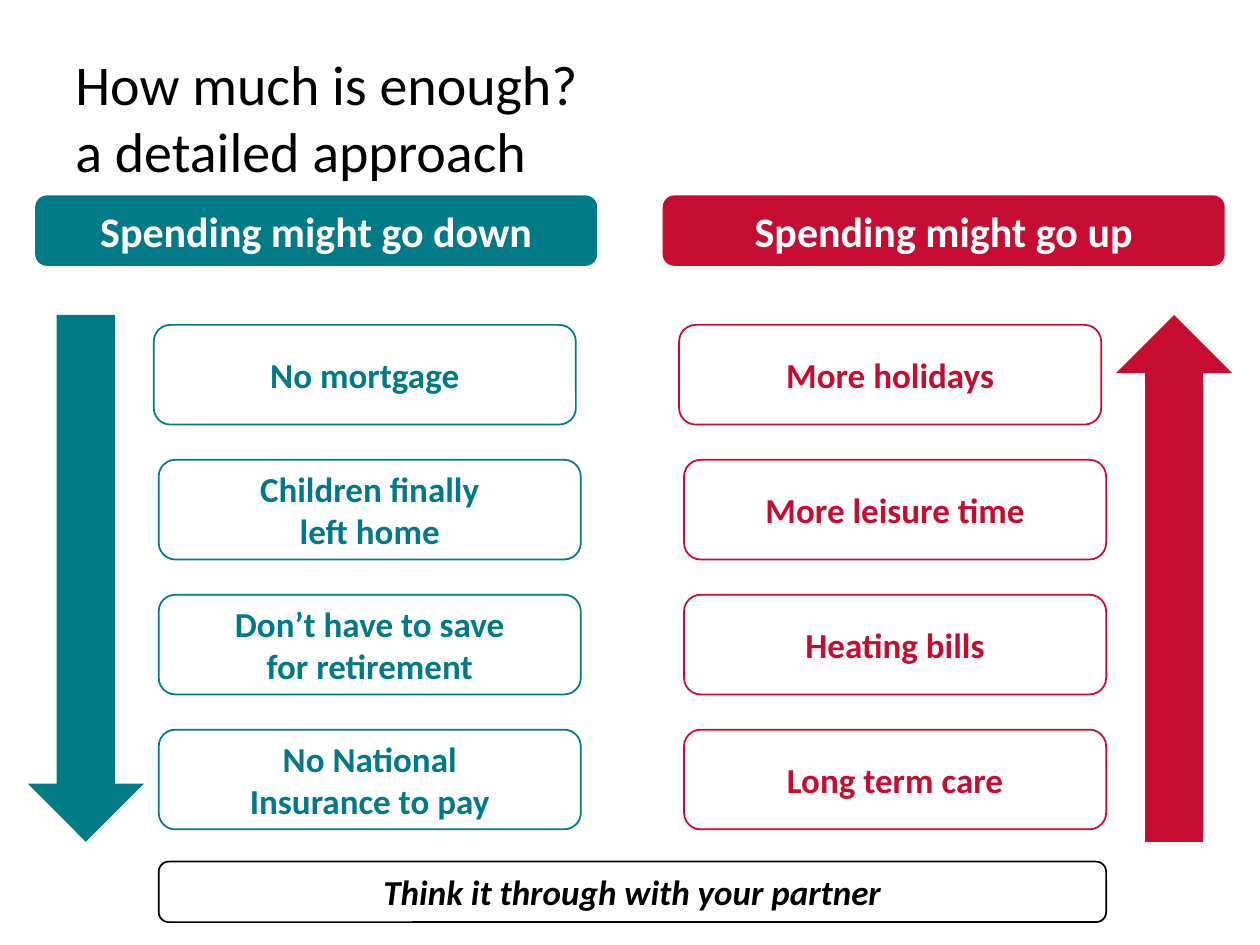
"""Build the slide on how spending may fall or rise in retirement."""
from pptx import Presentation
from pptx.dml.color import RGBColor
from pptx.enum.shapes import MSO_SHAPE
from pptx.enum.text import MSO_ANCHOR, PP_ALIGN
from pptx.util import Cm, Pt

TEAL = RGBColor(0x00, 0x7A, 0x87)
RED = RGBColor(0xC6, 0x0C, 0x30)
BLACK = RGBColor(0x00, 0x00, 0x00)
WHITE = RGBColor(0xFF, 0xFF, 0xFF)

TITLE = "How much is enough?\na detailed approach"
ADVICE = "Think it through with your partner"
COLUMNS = [
    {
        "heading": "Spending might go down",
        "color": TEAL,
        "heading_left": 0.71,
        "reasons_left": 3.2,
        "arrow_left": 0.56,
        "arrow_rotation": 0,
        "reasons": [
            ["No mortgage"],
            ["Children finally", "left home"],
            ["Don’t have to save", "for retirement"],
            ["No National", "Insurance to pay"],
        ],
    },
    {
        "heading": "Spending might go up",
        "color": RED,
        "heading_left": 13.36,
        "reasons_left": 13.79,
        "arrow_left": 22.5,
        "arrow_rotation": 180,
        "reasons": [
            ["More holidays"],
            ["More leisure time"],
            ["Heating bills"],
            ["Long term care"],
        ],
    },
]
REASON_TOP, REASON_STEP = 6.55, 2.72
FIRST_REASON_SHIFT = -0.1


def write_text(box, paragraphs, size, color, bold=False, italic=False, align=PP_ALIGN.CENTER):
    """Fill a box with formatted paragraphs, centred vertically."""
    frame = box.text_frame
    frame.word_wrap = True
    frame.vertical_anchor = MSO_ANCHOR.MIDDLE
    for index, text in enumerate(paragraphs):
        para = frame.add_paragraph() if index else frame.paragraphs[0]
        para.text = text
        para.alignment = align
        for span in para.runs:
            span.font.name = "Calibri"
            span.font.size = Pt(size)
            span.font.bold = bold
            span.font.italic = italic
            span.font.color.rgb = color


def add_block(page, kind, left, top, width, height, fill=None, line=None):
    """Add a flat shape that is either filled or outlined."""
    block = page.shapes.add_shape(kind, Cm(left), Cm(top), Cm(width), Cm(height))
    block.shadow.inherit = False
    if fill is None:
        block.fill.background()
    else:
        block.fill.solid()
        block.fill.fore_color.rgb = fill
    if line is None:
        block.line.fill.background()
    else:
        block.line.color.rgb = line
        block.line.width = Pt(1)
    return block


def add_column(page, column):
    """Add one arrow with its heading and its reasons."""
    color = column["color"]
    arrow = add_block(page, MSO_SHAPE.DOWN_ARROW, column["arrow_left"], 6.35, 2.34, 10.62, fill=color)
    arrow.rotation = column["arrow_rotation"]
    heading = add_block(page, MSO_SHAPE.ROUNDED_RECTANGLE, column["heading_left"], 3.94, 11.33, 1.42, fill=color)
    write_text(heading, [column["heading"]], size=24, color=WHITE, bold=True)
    for row, reason in enumerate(column["reasons"]):
        left = column["reasons_left"] + (0 if row else FIRST_REASON_SHIFT)
        top = REASON_TOP + row * REASON_STEP
        box = add_block(page, MSO_SHAPE.ROUNDED_RECTANGLE, left, top, 8.51, 2.01, line=color)
        write_text(box, reason, size=20, color=color, bold=True)


def main():
    """Assemble and save the deck."""
    deck = Presentation()
    deck.slide_width, deck.slide_height = Cm(25.4), Cm(19.05)
    page = deck.slides.add_slide(deck.slide_layouts[6])
    title = page.shapes.add_textbox(Cm(1.27), Cm(0.76), Cm(22.86), Cm(3.18))
    write_text(title, [TITLE], size=32, color=BLACK, align=PP_ALIGN.LEFT)
    for column in COLUMNS:
        add_column(page, column)
    advice = add_block(page, MSO_SHAPE.ROUNDED_RECTANGLE, 3.2, 17.37, 19.1, 1.22, line=BLACK)
    write_text(advice, [ADVICE], size=20, color=BLACK, bold=True, italic=True)
    deck.save("out.pptx")


if __name__ == "__main__":
    main()
